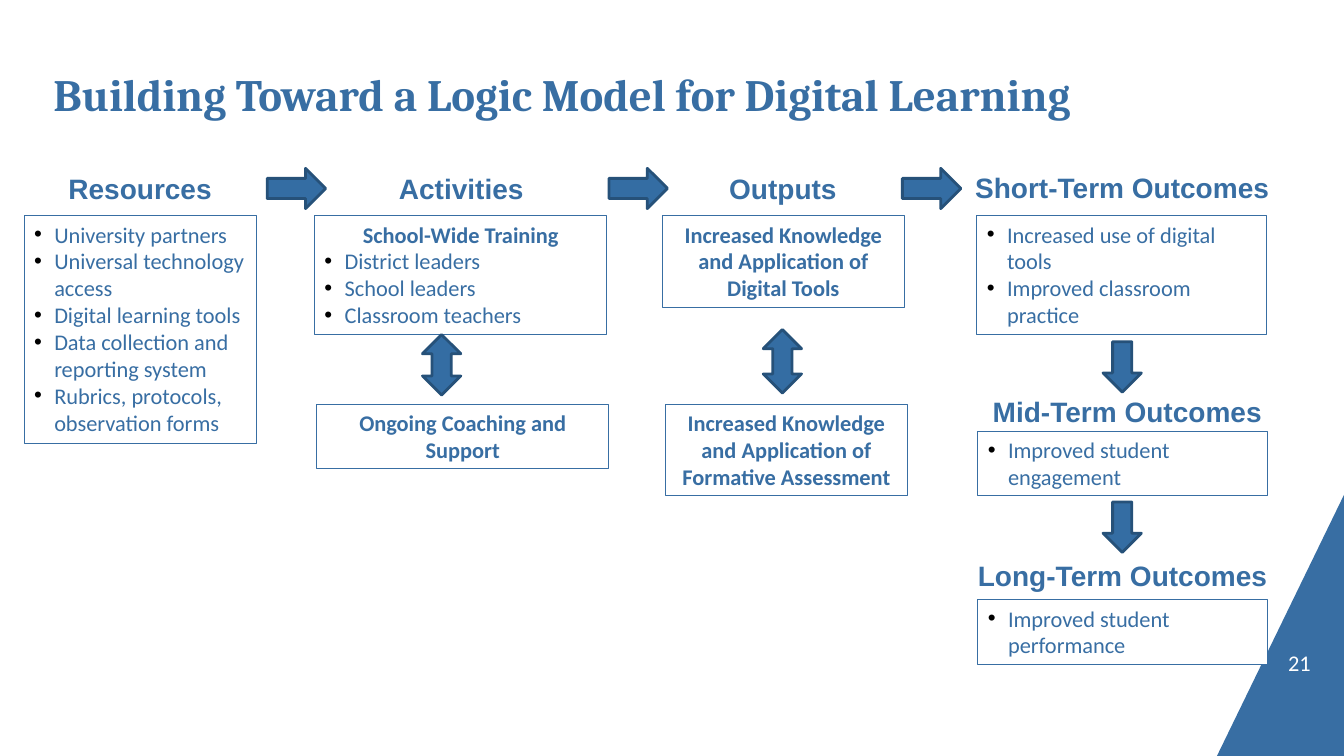
"""Build the slide with a logic model for digital learning."""
import pptx
import pptx.dml.color
import pptx.enum.shapes
import pptx.enum.text
import pptx.oxml
import pptx.oxml.ns
import pptx.util

PX = 9144
SHAPES = pptx.enum.shapes.MSO_SHAPE
ALIGN = pptx.enum.text.PP_ALIGN
ANCHOR = pptx.enum.text.MSO_ANCHOR
FIT = pptx.enum.text.MSO_AUTO_SIZE
THEME = {
    "blue": pptx.dml.color.RGBColor.from_string("386EA3"),
    "arrow": pptx.dml.color.RGBColor.from_string("346DA3"),
    "edge": pptx.dml.color.RGBColor.from_string("265179"),
    "white": pptx.dml.color.RGBColor.from_string("FFFFFF"),
    "title": {"name": "Cambria", "size": pptx.util.Pt(32), "bold": True},
    "heading": {"name": "Arial", "size": pptx.util.Pt(20), "bold": True},
    "strong": {"name": "Calibri", "size": pptx.util.Pt(16), "bold": True},
    "body": {"name": "Calibri", "size": pptx.util.Pt(16), "bold": False},
}
BULLET = (
    '<a:buClr %s><a:srgbClr val="000000"/></a:buClr>',
    '<a:buFont %s typeface="Arial"/>',
    '<a:buChar %s char="•"/>',
)


def write(box, lines, align=ALIGN.LEFT, color="blue", inset=None, **frame_format):
    """Fill a box with (style, text) lines; body lines on the left get bullets."""
    frame = box.text_frame
    settings = {"word_wrap": True, "auto_size": FIT.SHAPE_TO_FIT_TEXT,
                "vertical_anchor": ANCHOR.TOP, **frame_format}
    if inset is not None:
        for side in ("left", "right", "top", "bottom"):
            settings[f"margin_{side}"] = inset * PX
    for name, value in settings.items():
        setattr(frame, name, value)
    for index, (style, text) in enumerate(lines):
        para = frame.add_paragraph() if index else frame.paragraphs[0]
        para.alignment = align
        if style == "body" and align == ALIGN.LEFT:
            properties = para._p.get_or_add_pPr()
            properties.set("marL", str(20 * PX))
            properties.set("indent", str(-20 * PX))
            for element in BULLET:
                properties.append(pptx.oxml.parse_xml(element % pptx.oxml.ns.nsdecls("a")))
        elif style == "strong":
            para.alignment = ALIGN.CENTER
        span = para.add_run()
        span.text = text
        for name, value in THEME[style].items():
            setattr(span.font, name, value)
        span.font.color.rgb = THEME[color]


def add_preset(kind, place, line, width, fill=None):
    """Add a preset shape without a shadow."""
    shape = page.shapes.add_shape(kind, *(value * PX for value in place))
    shape.shadow.inherit = False
    shape.line.color.rgb = THEME[line]
    shape.line.width = pptx.util.Pt(width)
    if fill:
        shape.fill.solid()
        shape.fill.fore_color.rgb = THEME[fill]
    else:
        shape.fill.background()
    return shape


deck = pptx.Presentation()
deck.slide_width, deck.slide_height = 1333 * PX, 750 * PX
page = deck.slides.add_slide(deck.slide_layouts[6])

outline = page.shapes.build_freeform(1333, 491, scale=PX)
outline.add_line_segments([(1207, 750), (1333, 750)], close=True)
corner = outline.convert_to_shape()
corner.shadow.inherit = False
corner.fill.solid()
corner.fill.fore_color.rgb = THEME["blue"]
corner.line.fill.background()

number = page.shapes.add_textbox(*(value * PX for value in (1201, 641, 99, 30)))
write(number, [("body", "21")], ALIGN.RIGHT, "white", 0,
      auto_size=FIT.NONE, vertical_anchor=ANCHOR.BOTTOM)

title = page.shapes.add_textbox(*(value * PX for value in (53, 66, 1097, 54)))
write(title, [("title", "Building Toward a Logic Model for Digital Learning")],
      inset=0, auto_size=FIT.NONE, vertical_anchor=ANCHOR.MIDDLE)

headings = [
    ("Resources", (58, 165, 163, 44), ALIGN.LEFT),
    ("Activities", (355, 165, 205, 44), ALIGN.CENTER),
    ("Outputs", (702, 165, 149, 44), ALIGN.CENTER),
    ("Short-Term Outcomes", (954, 164, 318, 45), ALIGN.CENTER),
    ("Mid-Term Outcomes", (969, 386, 298, 45), ALIGN.CENTER),
    ("Long-Term Outcomes", (960, 549, 318, 44), ALIGN.LEFT),
]
for text, place, align in headings:
    heading = page.shapes.add_textbox(*(value * PX for value in place))
    write(heading, [("heading", text)], align)

panels = [
    ((24, 214, 230, 226), None, None, [
        ("body", "University partners"),
        ("body", "Universal technology access"),
        ("body", "Digital learning tools"),
        ("body", "Data collection and reporting system"),
        ("body", "Rubrics, protocols, observation forms")]),
    ((312, 214, 290, 118), None, None, [
        ("strong", "School-Wide Training"),
        ("body", "District leaders"),
        ("body", "School leaders"),
        ("body", "Classroom teachers")]),
    ((314, 401, 290, 64), "white", 5, [("strong", "Ongoing Coaching and Support")]),
    ((657, 214, 240, 91), None, None, [
        ("strong", "Increased Knowledge and Application of Digital Tools")]),
    ((660, 401, 240, 91), None, None, [
        ("strong", "Increased Knowledge and Application of Formative Assessment")]),
    ((969, 214, 287, 118), None, None, [
        ("body", "Increased use of digital tools"),
        ("body", "Improved classroom practice")]),
    ((970, 428, 287, 64), None, None, [("body", "Improved student engagement")]),
    ((970, 595, 287, 64), "white", None, [("body", "Improved student performance")]),
]
for place, fill, inset, lines in panels:
    panel = add_preset(SHAPES.RECTANGLE, place, "blue", 0.75, fill)
    write(panel, lines, inset=inset)

arrows = [(SHAPES.RIGHT_ARROW, (left, 167, 58, 40), 0) for left in (265, 604, 895)]
arrows += [(SHAPES.RIGHT_ARROW, (1088, top, 50, 38), 90) for top in (345, 504)]
arrows += [
    (SHAPES.UP_DOWN_ARROW, (419, 332, 38, 60), 0),
    (SHAPES.UP_DOWN_ARROW, (757, 327, 38, 63), 0),
]
for kind, place, rotation in arrows:
    arrow = add_preset(kind, place, "edge", 2, "arrow")
    arrow.rotation = rotation

deck.save("out.pptx")
